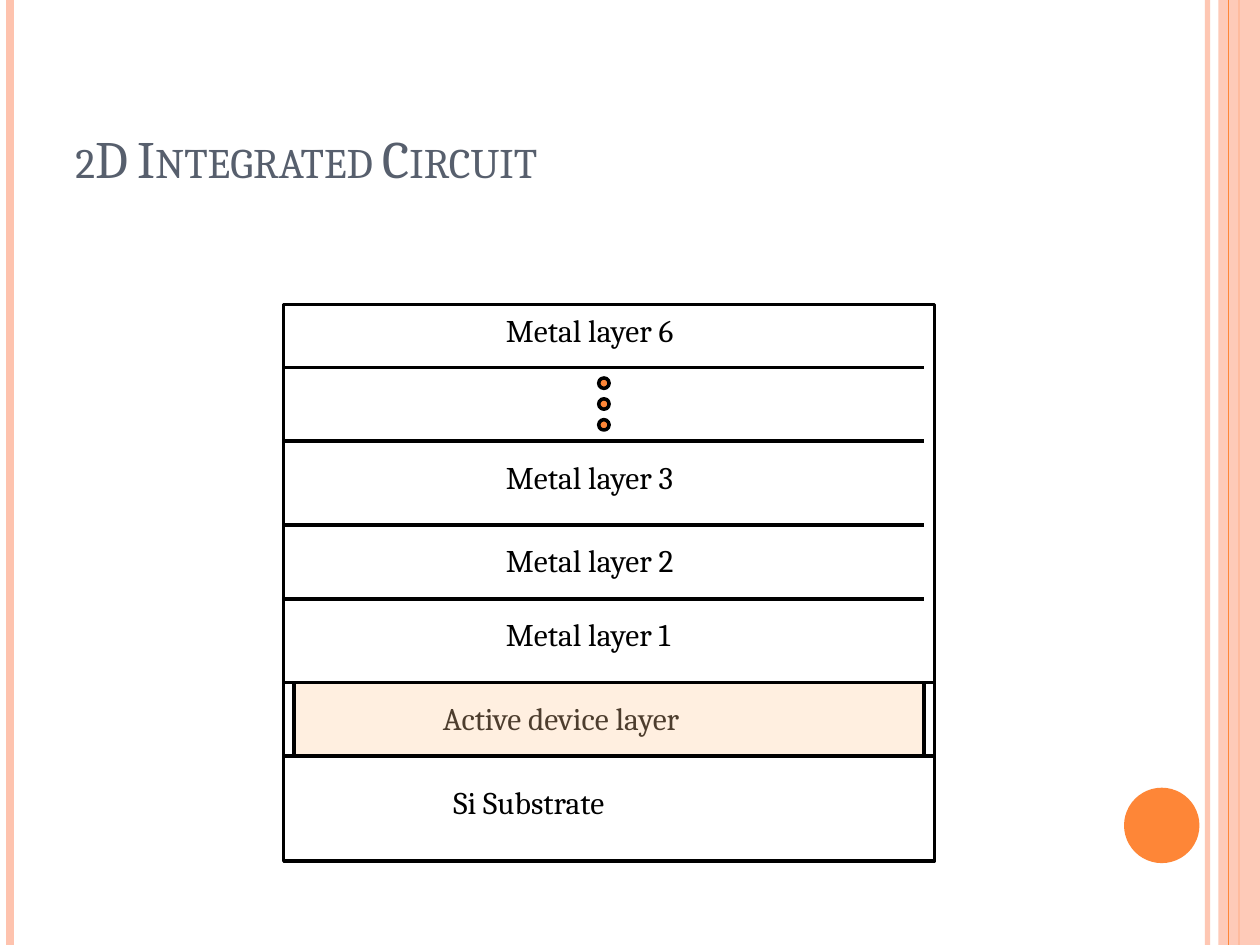
from lxml import etree
from pptx import Presentation
from pptx import util as u
from pptx.dml.color import RGBColor
from pptx.enum import shapes, text
from pptx.oxml import ns

ORANGE, PEACH, BLACK = "FE8637", "FEC3AE", "000000"
RECT, OVAL = shapes.MSO_SHAPE.RECTANGLE, shapes.MSO_SHAPE.OVAL
LINE = "line"


def paint(fill, colour, opacity=100):
    """Make a fill solid, or clear when there is no colour."""
    if colour is None:
        fill.background()
        return
    fill.solid()
    fill.fore_color.rgb = RGBColor.from_string(colour)
    if opacity < 100:
        tone = fill._xPr.find(".//" + ns.qn("a:srgbClr"))
        etree.SubElement(tone, ns.qn("a:alpha"), val=str(opacity * 1000))


def draw(kind, place, fill=None, line=None, width=2, opacity=100):
    """Place is two points for a line, or left, top, width, height."""
    lengths = [u.Cm(value) for value in place]
    if kind == LINE:
        item = page.shapes.add_connector(shapes.MSO_CONNECTOR.STRAIGHT, *lengths)
    else:
        item = page.shapes.add_shape(kind, *lengths)
        item.shadow.inherit = False
        paint(item.fill, fill, opacity)
    paint(item.line.fill, line, opacity if kind == LINE else 100)
    if line:
        item.line.width = u.Pt(width)
    if kind == LINE:
        etree.SubElement(item._element.spPr, ns.qn("a:effectLst"))


deck = Presentation()
deck.slide_width, deck.slide_height = u.Cm(25.4), u.Cm(19.05)
page = deck.slides.add_slide(deck.slide_layouts[6])

# Side stripes, band and circle
for x, colour, width, opacity in [(24.34, PEACH, 3, 93), (0.21, PEACH, 4.5, 100),
                                  (24.98, ORANGE, 1.5, 100)]:
    draw(LINE, (x, 0, x, 19.05), line=colour, width=width, opacity=opacity)
draw(RECT, (24.56, 0, 0.84, 19.05), fill=PEACH, opacity=87)
draw(LINE, (24.77, 0, 24.77, 19.05), line=ORANGE, width=0.75)
draw(OVAL, (22.66, 15.88, 1.52, 1.52), fill=ORANGE)

# Chip outline and the boundaries between its layers
left, top, chip_width, chip_height = 5.72, 6.14, 13.12, 11.22
right, inner_right = left + chip_width, 18.63
metal_6, metal_3, metal_2, metal_1 = 7.41, 8.89, 10.58, 12.07
active, substrate = 13.76, 15.24
draw(RECT, (left, top, chip_width, chip_height), line=BLACK)
for y in (metal_6, metal_3, metal_2, metal_1):
    draw(LINE, (left, y, inner_right, y), line=BLACK)
for y in (active, substrate):
    draw(LINE, (left, y, right, y), line=BLACK)

# Title and layer labels
gap = 0.21
metal_x, metal_width, label_height = 9.95, 4.87, 1.27
labels = [
    ("Si Substrate", 8.89, substrate + 2 * gap, 6.35),
    ("Active device layer", 8.68, active + gap, 7.2),
    ("Metal layer 1", metal_x, metal_1 + gap, metal_width),
    ("Metal layer 2", metal_x, metal_2 + gap, metal_width),
    ("Metal layer 3", metal_x, metal_3 + gap, metal_width),
    ("Metal layer 6", metal_x, top, metal_width),
]
title_style = {"size": u.Pt(30), "name": "Cambria"}
label_style = {"size": u.Pt(18), "name": "Cambria"}
entries = [("2D Integrated Circuit", 1.27, 0.76, 20.75, 3.18, "575F6D", title_style)]
entries += [(*label, label_height, BLACK, label_style) for label in labels]
for words, x, y, width, height, colour, style in entries:
    box = page.shapes.add_textbox(u.Cm(x), u.Cm(y), u.Cm(width), u.Cm(height))
    box.text_frame.word_wrap = True
    para = box.text_frame.paragraphs[0]
    span = para.add_run()
    span.text = words
    for name, value in style.items():
        setattr(span.font, name, value)
    paint(span.font.fill, colour)
    if style is title_style:
        box.text_frame.vertical_anchor = text.MSO_ANCHOR.BOTTOM
        span.font._element.set("cap", "small")

# Dots for the layers left out
for step in range(3):
    draw(OVAL, (12.07, 7.62 + 0.42 * step, 0.21, 0.21), fill=ORANGE, line=BLACK)

# Tint over the active device layer
draw(RECT, (left + gap, active, inner_right - left - gap, substrate - active),
     fill="FFCC99", line=BLACK, opacity=30)

deck.save("out.pptx")
